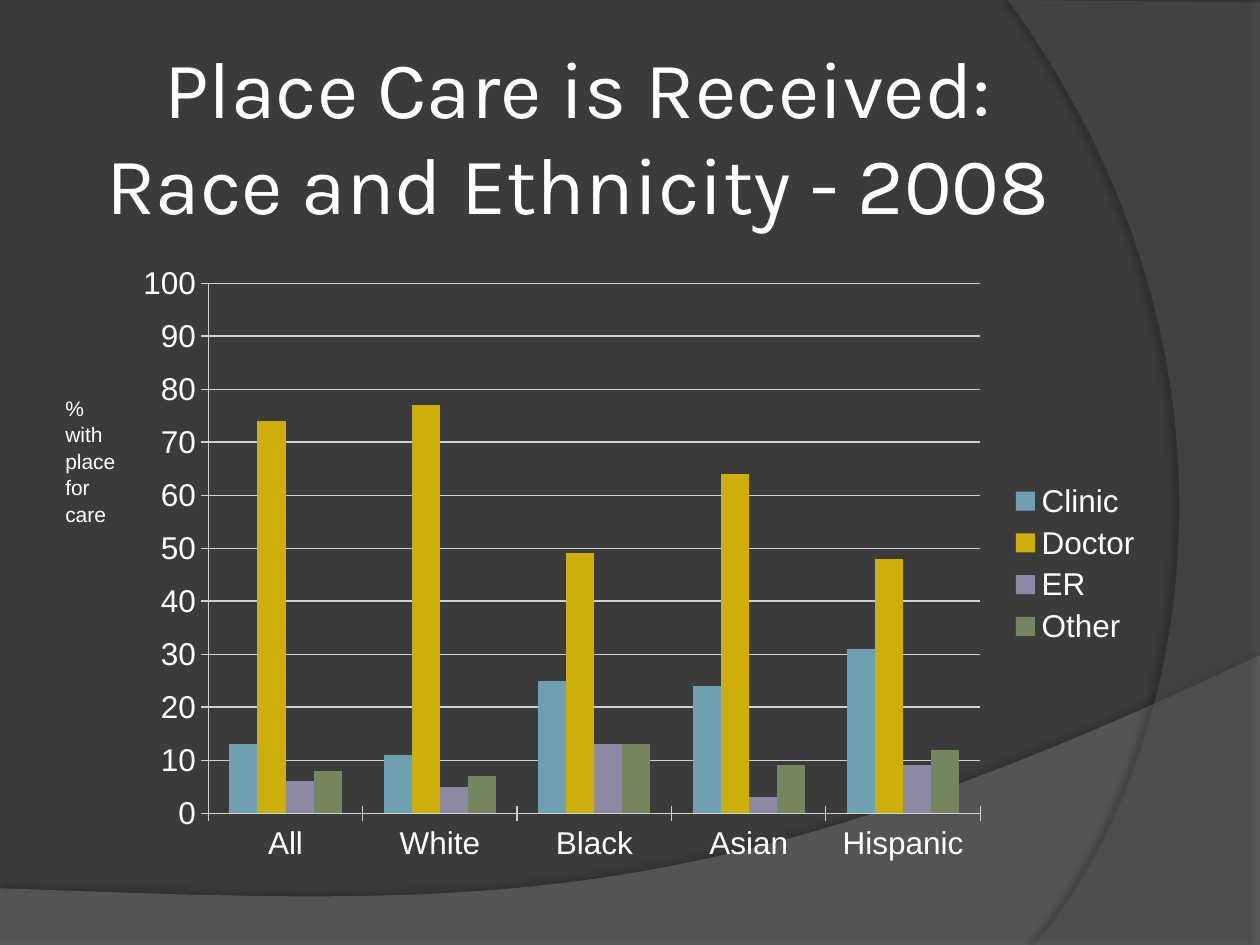
from dataclasses import dataclass

from lxml import etree
from pptx import Presentation
from pptx import util as u
from pptx.chart.data import CategoryChartData
from pptx.dml.color import RGBColor
from pptx.enum import chart as ch
from pptx.enum import text
from pptx.oxml import parse_xml
from pptx.oxml.ns import nsdecls, qn

COLORS = {
    "background": "3B3B3B",
    "lower_band": "7F7F7F",
    "right_band": "5E5E5E",
    "shadow": "000000",
    "text": "FFFFFF",
    "grid": "D0D0D0",
    "clinic": "6EA0B0",
    "doctor": "CCAF0A",
    "er": "8D89A4",
    "other": "748560",
}
CURVE_STEPS = 60
Point = tuple[float, float]


@dataclass
class Band:
    color: str
    opacity: int
    corners: list[Point]
    curve: list[Point]
    shadow_opacity: int
    shadow_distance: float
    shadow_angle: int


@dataclass
class Series:
    name: str
    color: str
    values: list[int]


BANDS = [
    Band("lower_band", 45, [(0, 7.05), (0, 7.51), (10, 7.51)],
         [(10, 5.2), (5.59, 7.29), (3.91, 7.19), (0, 7.05)], 35, 3.5, 270),
    Band("right_band", 40, [(10, 0.02), (10, 7.5)],
         [(8.21, 7.5), (9.35, 6.19), (10.18, 3), (8, 0)], 45, 4, 180),
]
GROUPS = ["All", "White", "Black", "Asian", "Hispanic"]
PLACES = [
    Series("Clinic", "clinic", [13, 11, 25, 24, 31]),
    Series("Doctor", "doctor", [74, 77, 49, 64, 48]),
    Series("ER", "er", [6, 5, 13, 3, 9]),
    Series("Other", "other", [8, 7, 13, 9, 12]),
]


def rgb(name: str) -> RGBColor:
    return RGBColor.from_string(COLORS[name])


def style_font(font, name: str, size: float) -> None:
    font.name = name
    font.size = u.Pt(size)
    font.color.rgb = rgb("text")


def curve_points(controls: list[Point]) -> list[Point]:
    points = []
    for step in range(CURVE_STEPS + 1):
        t = step / CURVE_STEPS
        weights = ((1 - t) ** 3, 3 * t * (1 - t) ** 2, 3 * t * t * (1 - t), t ** 3)
        points.append(tuple(sum(w * p[axis] for w, p in zip(weights, controls))
                            for axis in (0, 1)))
    return points


def add_band(page, band: Band) -> None:
    outline = [(u.Inches(x), u.Inches(y)) for x, y in band.corners + curve_points(band.curve)]
    builder = page.shapes.build_freeform(*outline[0], scale=1.0)
    builder.add_line_segments(outline[1:], close=True)
    shape = builder.convert_to_shape()
    shape.fill.solid()
    shape.fill.fore_color.rgb = rgb(band.color)
    shape.line.fill.background()
    properties = shape.element.spPr
    fill_color = properties.find(qn("a:solidFill")).find(qn("a:srgbClr"))
    etree.SubElement(fill_color, qn("a:alpha"), val=str(band.opacity * 1000))
    properties.append(parse_xml(
        f'<a:effectLst {nsdecls("a")}><a:outerShdw blurRad="{u.Pt(4)}" '
        f'dist="{u.Pt(band.shadow_distance)}" dir="{band.shadow_angle * 60000}" '
        f'algn="ctr" rotWithShape="0"><a:srgbClr val="{COLORS["shadow"]}">'
        f'<a:alpha val="{band.shadow_opacity * 1000}"/></a:srgbClr>'
        f'</a:outerShdw></a:effectLst>'))


def place_title(page) -> None:
    title = page.shapes.title
    page.shapes.element.append(title.element)
    title.left, title.top = u.Inches(0.5), u.Inches(0.25)
    title.width, title.height = u.Inches(8.17), u.Inches(1.5)
    frame = title.text_frame
    frame.text = "Place Care is Received:\nRace and Ethnicity - 2008"
    frame.word_wrap = True
    frame.auto_size = text.MSO_AUTO_SIZE.NONE
    frame.vertical_anchor = text.MSO_ANCHOR.TOP
    for para in frame.paragraphs:
        para.alignment = text.PP_ALIGN.CENTER
        para.space_before = u.Pt(0)
        style_font(para.font, "Karla", 46)


def set_plot_layout(chart, x: float, y: float, w: float, h: float) -> None:
    plot_area = chart.element.chart.plotArea
    for old in plot_area.findall(qn("c:layout")):
        plot_area.remove(old)
    sizes = "".join(f'<c:{tag} val="{value}"/>'
                    for tag, value in zip("xywh", (x, y, w, h)))
    plot_area.insert(0, parse_xml(
        f'<c:layout {nsdecls("c")}><c:manualLayout><c:layoutTarget val="inner"/>'
        f'<c:xMode val="edge"/><c:yMode val="edge"/>{sizes}'
        f'</c:manualLayout></c:layout>'))


def add_care_chart(page) -> None:
    data = CategoryChartData()
    data.categories = GROUPS
    for place in PLACES:
        data.add_series(place.name, place.values)
    chart = page.shapes.add_chart(
        ch.XL_CHART_TYPE.COLUMN_CLUSTERED, u.Inches(1), u.Inches(2),
        u.Inches(8.17), u.Inches(4.95), data).chart
    style_font(chart.font, "Arial", 18)
    chart.has_title = False
    chart.has_legend = True
    chart.legend.position = ch.XL_LEGEND_POSITION.RIGHT
    chart.legend.include_in_layout = False

    plot = chart.plots[0]
    plot.vary_by_categories = False
    plot.gap_width = 150
    plot.overlap = 0
    for series, place in zip(plot.series, PLACES):
        series.format.fill.solid()
        series.format.fill.fore_color.rgb = rgb(place.color)

    values = chart.value_axis
    values.minimum_scale, values.maximum_scale, values.major_unit = 0, 100, 10
    values.has_major_gridlines = True
    for line in (values.major_gridlines.format.line, values.format.line,
                 chart.category_axis.format.line):
        line.color.rgb = rgb("grid")
        line.width = u.Pt(0.75)
    for axis in (values, chart.category_axis):
        axis.major_tick_mark = ch.XL_TICK_MARK.CROSS
    set_plot_layout(chart, 0.08, 0.05, 0.75, 0.85)


def add_axis_note(page) -> None:
    box = page.shapes.add_textbox(u.Inches(0.42), u.Inches(3.08),
                                  u.Inches(0.67), u.Inches(1.11))
    frame = box.text_frame
    frame.word_wrap = True
    frame.auto_size = text.MSO_AUTO_SIZE.SHAPE_TO_FIT_TEXT
    para = frame.paragraphs[0]
    para.text = "% with place for care"
    para.line_spacing = 1.05
    style_font(para.font, "Arial", 12)


def main() -> None:
    deck = Presentation()
    deck.slide_width, deck.slide_height = u.Inches(10), u.Inches(7.5)
    page = deck.slides.add_slide(deck.slide_layouts[5])
    page.background.fill.solid()
    page.background.fill.fore_color.rgb = rgb("background")
    for band in BANDS:
        add_band(page, band)
    place_title(page)
    add_care_chart(page)
    add_axis_note(page)
    deck.save("out.pptx")


if __name__ == "__main__":
    main()
